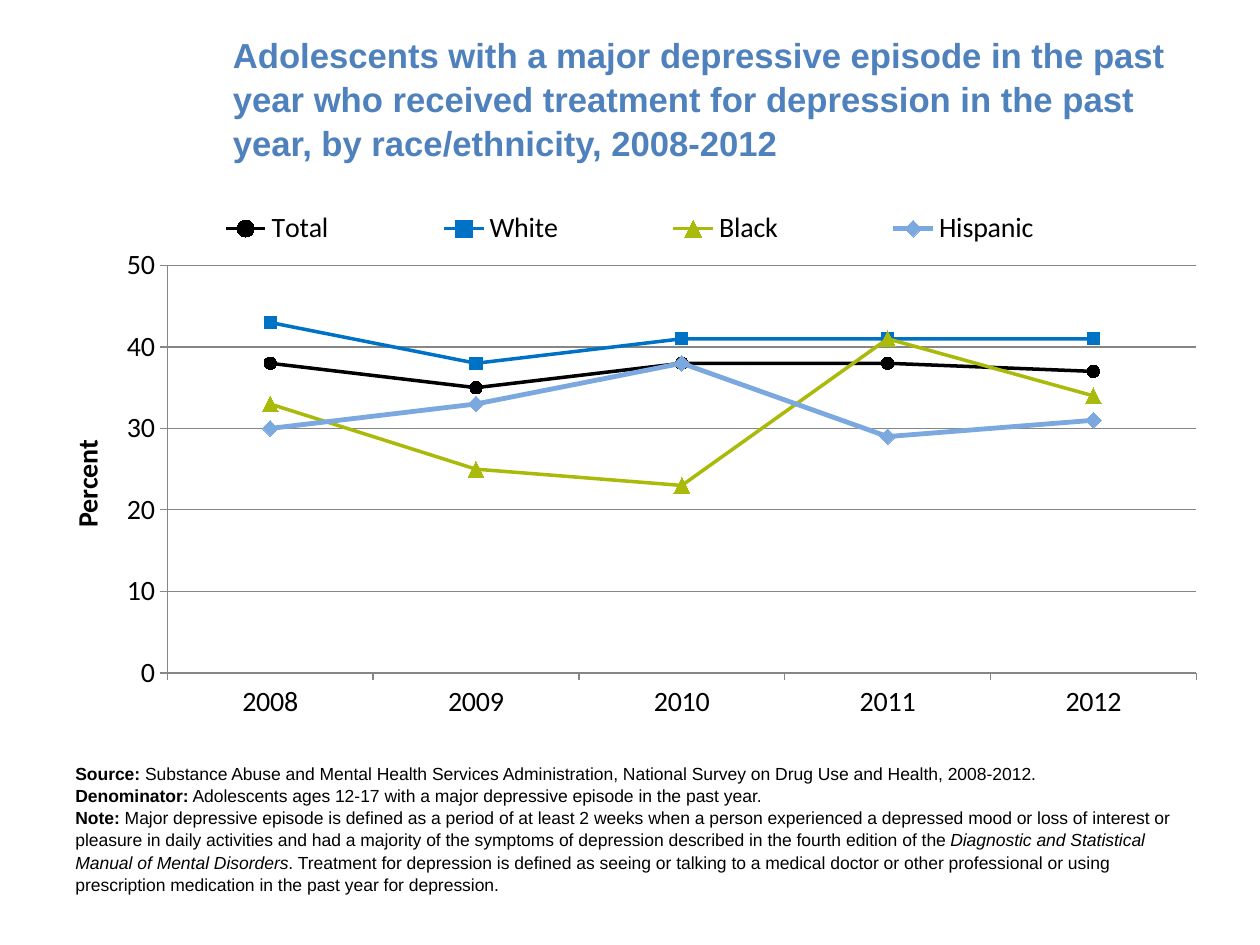
from lxml import etree
from pptx import Presentation
from pptx.chart.data import CategoryChartData
from pptx.dml.color import RGBColor
from pptx.enum.chart import XL_CHART_TYPE, XL_LEGEND_POSITION, XL_MARKER_STYLE, XL_TICK_MARK
from pptx.enum.text import MSO_ANCHOR
from pptx.oxml import parse_xml
from pptx.oxml.ns import nsdecls
from pptx.util import Pt

LINE_MARKERS = XL_CHART_TYPE.LINE_MARKERS
TOP = XL_LEGEND_POSITION.TOP
OUTSIDE = XL_TICK_MARK.OUTSIDE
CIRCLE, SQUARE = XL_MARKER_STYLE.CIRCLE, XL_MARKER_STYLE.SQUARE
TRIANGLE, DIAMOND = XL_MARKER_STYLE.TRIANGLE, XL_MARKER_STYLE.DIAMOND
MIDDLE = MSO_ANCHOR.MIDDLE

BLACK = RGBColor(0x00, 0x00, 0x00)
TITLE_BLUE = RGBColor(0x4F, 0x81, 0xBD)
WHITE_SERIES = RGBColor(0x00, 0x72, 0xC6)
BLACK_SERIES = RGBColor(0xAA, 0xBA, 0x0A)
HISPANIC_SERIES = RGBColor(0x7B, 0xA8, 0xDF)
GRID_GRAY = RGBColor(0x86, 0x86, 0x86)


def set_font(font, name, size, color, bold=None):
    font.name, font.size, font.bold = name, Pt(size), bold
    font.color.rgb = color


def manual_layout(x, y, w, h, inner=False):
    target = '<c:layoutTarget val="inner"/>' if inner else ""
    return parse_xml(
        f'<c:layout {nsdecls("c")}><c:manualLayout>{target}'
        '<c:xMode val="edge"/><c:yMode val="edge"/>'
        f'<c:x val="{x}"/><c:y val="{y}"/><c:w val="{w}"/><c:h val="{h}"/>'
        "</c:manualLayout></c:layout>")


prs = Presentation()
prs.slide_width, prs.slide_height = Pt(720), Pt(540)
slide = prs.slides.add_slide(prs.slide_layouts[6])

# Title
title = slide.shapes.add_textbox(Pt(126), Pt(21.6), Pt(558), Pt(68.4)).text_frame
title.word_wrap = True
title.vertical_anchor = MIDDLE
heading = title.paragraphs[0]
heading.text = ("Adolescents with a major depressive episode in the past year who received "
                "treatment for depression in the past year, by race/ethnicity, 2008-2012")
heading.line_spacing = 1.05
set_font(heading.font, "Arial", 19.8, TITLE_BLUE, True)

# Treatment rates by year: name, values, colour, line width, marker, marker size
groups = [
    ("Total", (38, 35, 38, 38, 37), BLACK, 2, CIRCLE, 7),
    ("White", (43, 38, 41, 41, 41), WHITE_SERIES, 2, SQUARE, 7),
    ("Black", (33, 25, 23, 41, 34), BLACK_SERIES, 2, TRIANGLE, 9),
    ("Hispanic", (30, 33, 38, 29, 31), HISPANIC_SERIES, 2.75, DIAMOND, 9),
]
rates = CategoryChartData(number_format="0")
rates.categories = ["2008", "2009", "2010", "2011", "2012"]
for name, values, *_ in groups:
    rates.add_series(name, values)
chart = slide.shapes.add_chart(
    LINE_MARKERS, Pt(36), Pt(115.2), Pt(648), Pt(309.6), rates).chart
chart.has_title = False
set_font(chart.font, "Arial", 10, BLACK)

for series, (_, _, color, width, marker, size) in zip(chart.plots[0].series, groups):
    series.smooth = False
    series.format.line.color.rgb = color
    series.format.line.width = Pt(width)
    series.marker.style, series.marker.size = marker, size
    series.marker.format.fill.solid()
    series.marker.format.fill.fore_color.rgb = color
    series.marker.format.line.color.rgb = color

# Axes
years, percent = chart.category_axis, chart.value_axis
for axis in (years, percent):
    axis.major_tick_mark = OUTSIDE
    axis.format.line.color.rgb = GRID_GRAY
    axis.format.line.width = Pt(0.75)
    set_font(axis.tick_labels.font, "Calibri", 16, BLACK)
percent.minimum_scale, percent.maximum_scale, percent.major_unit = 0, 50, 10
percent.tick_labels.number_format = "0"
percent.tick_labels.number_format_is_linked = False
percent.has_major_gridlines = True
percent.major_gridlines.format.line.color.rgb = GRID_GRAY
percent.major_gridlines.format.line.width = Pt(0.75)
percent_label = percent.axis_title.text_frame.paragraphs[0]
percent_label.text = "Percent"
set_font(percent_label.font, "Calibri", 16, BLACK, True)

# Legend and plot area placement
chart.has_legend = True
legend = chart.legend
legend.position = TOP
legend.include_in_layout = False
set_font(legend.font, "Calibri", 16, BLACK)
plot_area = chart.plots[0]._element.getparent()
for old_layout in plot_area.findall("{*}layout"):
    plot_area.remove(old_layout)
plot_area.insert(0, manual_layout(0.092, 0.118, 0.908, 0.752, inner=True))
for old_layout in legend._element.findall("{*}layout"):
    legend._element.remove(old_layout)
legend_position = legend._element.find("{*}legendPos")
legend_position.addnext(manual_layout(0.05, 0.01, 0.9, 0.08))

# Source and notes: each run is text, bold, italic
notes = [
    [("Source:", True, False),
     (" Substance Abuse and Mental Health Services Administration, National Survey on "
      "Drug Use and Health, 2008-2012.", False, False)],
    [("Denominator:", True, False),
     (" Adolescents ages 12-17 with a major depressive episode in the past year.", False, False)],
    [("Note:", True, False),
     (" Major depressive episode is defined as a period of at least 2 weeks when a person "
      "experienced a depressed mood or loss of interest or pleasure in daily activities and "
      "had a majority of the symptoms of depression described in the fourth edition of the ",
      False, False),
     ("Diagnostic and Statistical Manual of Mental Disorders", False, True),
     (". Treatment for depression is defined as seeing or talking to a medical doctor or other "
      "professional or using prescription medication in the past year for depression.",
      False, False)],
]
footer = slide.shapes.add_textbox(Pt(36), Pt(432), Pt(648), Pt(86.4)).text_frame
footer.word_wrap = True
for i, runs in enumerate(notes):
    note = footer.add_paragraph() if i else footer.paragraphs[0]
    note.line_spacing = 1.05
    set_font(note.font, "Arial", 10, BLACK)
    for text, bold, italic in runs:
        run = note.add_run()
        run.text = text
        run.font.bold, run.font.italic = bold, italic

prs.save("out.pptx")
